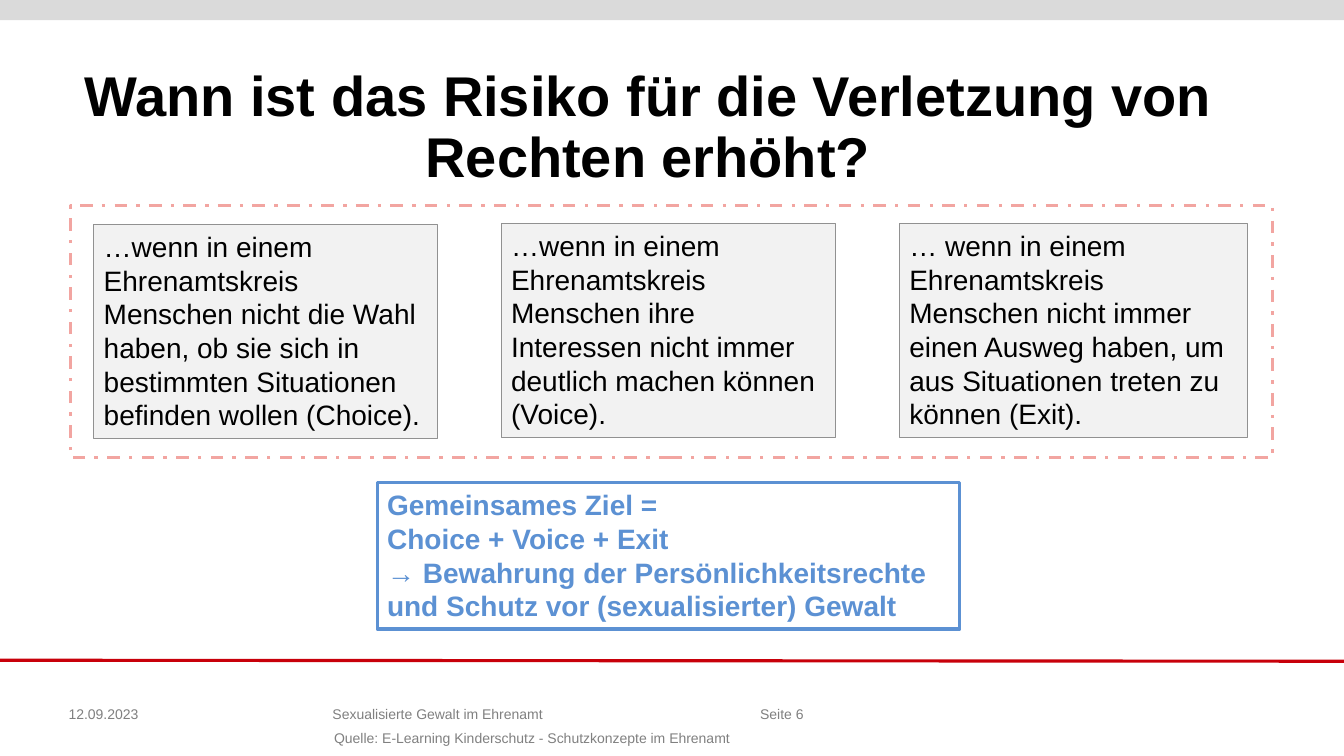
from lxml import etree
from pptx import Presentation
from pptx.dml.color import RGBColor
from pptx.enum.dml import MSO_LINE_DASH_STYLE as DASH
from pptx.enum.shapes import MSO_CONNECTOR, MSO_SHAPE
from pptx.enum.text import MSO_ANCHOR, MSO_AUTO_SIZE, PP_ALIGN
from pptx.oxml.ns import qn
from pptx.util import Inches, Pt

COLORS = {
    "band": "DADADA",
    "rule": "C8000A",
    "text": "000000",
    "footer": "808080",
    "card": "F2F2F2",
    "card_line": "919191",
    "goal": "5C91D3",
    "frame": "F2A5A1",
}

# left, top, width, text of each risk
RISKS = [
    (0.93, 2.23, 3.41, "…wenn in einem Ehrenamtskreis Menschen nicht die Wahl haben, "
     "ob sie sich in bestimmten Situationen befinden wollen (Choice)."),
    (4.97, 2.22, 3.32, "…wenn in einem Ehrenamtskreis Menschen ihre Interessen "
     "nicht immer deutlich machen können (Voice)."),
    (8.92, 2.22, 3.45, "… wenn in einem Ehrenamtskreis Menschen nicht immer einen "
     "Ausweg haben, um aus Situationen treten zu können (Exit)."),
]
GOAL = [
    "Gemeinsames Ziel =",
    "Choice + Voice + Exit",
    "→ Bewahrung der Persönlichkeitsrechte und Schutz vor (sexualisierter) Gewalt",
]
# left, top, width, height, left inset, alignment, text of each footer part
FOOTERS = [
    (0.68, 6.68, 1.25, 0.49, 0, PP_ALIGN.LEFT, "12.09.2023"),
    (1.93, 6.68, 4.72, 0.49, 0.1, PP_ALIGN.CENTER, "Sexualisierte Gewalt im Ehrenamt"),
    (6.66, 6.68, 1.31, 0.49, 0.1, PP_ALIGN.RIGHT, "Seite 6"),
    (1.4, 7.08, 7.65, 0.32, 0.1, PP_ALIGN.CENTER,
     "Quelle: E-Learning Kinderschutz - Schutzkonzepte im Ehrenamt"),
]


def color(name):
    return RGBColor.from_string(COLORS[name])


def write(frame, lines, size=20, tone="text", bold=False, align=PP_ALIGN.LEFT,
          anchor=MSO_ANCHOR.TOP, insets=(0.1, 0.05, 0.1, 0.05), spacing=None):
    frame.word_wrap = True
    frame.auto_size = MSO_AUTO_SIZE.NONE
    frame.vertical_anchor = anchor
    (frame.margin_left, frame.margin_top,
     frame.margin_right, frame.margin_bottom) = map(Inches, insets)
    for index, line in enumerate(lines):
        paragraph = frame.add_paragraph() if index else frame.paragraphs[0]
        paragraph.alignment = align
        paragraph.line_spacing = spacing
        run = paragraph.add_run()
        run.text = line
        run.font.name = "Arial"
        run.font.size = Pt(size)
        run.font.bold = bold
        run.font.color.rgb = color(tone)


def add_box(slide, left, top, width, height, fill=None, line=None, weight=0.75, dash=None):
    box = slide.shapes.add_shape(MSO_SHAPE.RECTANGLE, *map(Inches, (left, top, width, height)))
    box.shadow.inherit = False
    if fill:
        box.fill.solid()
        box.fill.fore_color.rgb = color(fill)
    else:
        box.fill.background()
    if line:
        box.line.color.rgb = color(line)
        box.line.width = Pt(weight)
        box.line.dash_style = dash
    else:
        box.line.fill.background()
    return box


def add_rule(slide, start, end):
    rule = slide.shapes.add_connector(MSO_CONNECTOR.STRAIGHT, *map(Inches, start + end))
    rule.line.color.rgb = color("rule")
    rule.line.width = Pt(2.25)
    etree.SubElement(rule.element.spPr, qn("a:effectLst"))


def add_footer(slide, left, top, width, height, inset, align, text):
    footer = slide.shapes.add_textbox(*map(Inches, (left, top, width, height)))
    write(footer.text_frame, [text], size=10, tone="footer", align=align,
          anchor=MSO_ANCHOR.BOTTOM, insets=(inset, 0.05, 0, 0))


def set_title(slide, text):
    title = slide.shapes.title
    title.left, title.top, title.width, title.height = map(Inches, (0.77, 0.49, 11.41, 1.44))
    write(title.text_frame, [text], size=40, bold=True, align=PP_ALIGN.CENTER,
          anchor=MSO_ANCHOR.BOTTOM, insets=(0, 0.05, 0.1, 0.05), spacing=0.9)


def main():
    deck = Presentation()
    deck.slide_width, deck.slide_height = Inches(13.33), Inches(7.5)
    slide = deck.slides.add_slide(deck.slide_layouts[5])

    # Page furniture and title
    add_box(slide, 0, 0, 13.33, 0.2, fill="band")
    add_rule(slide, (-0.03, 6.55), (13.36, 6.56))
    set_title(slide, "Wann ist das Risiko für die Verletzung von Rechten erhöht?")
    for footer in FOOTERS:
        add_footer(slide, *footer)

    # Three risks in a dashed frame
    for left, top, width, text in RISKS:
        risk = add_box(slide, left, top, width, 2.12, fill="card", line="card_line")
        write(risk.text_frame, [text])
    add_box(slide, 0.7, 2.04, 11.92, 2.5, line="frame", weight=2.25, dash=DASH.DASH_DOT)

    # Shared goal
    goal = add_box(slide, 3.74, 4.79, 5.78, 1.45, line="goal", weight=2.25)
    write(goal.text_frame, GOAL, tone="goal", bold=True)

    deck.save("out.pptx")


if __name__ == "__main__":
    main()
